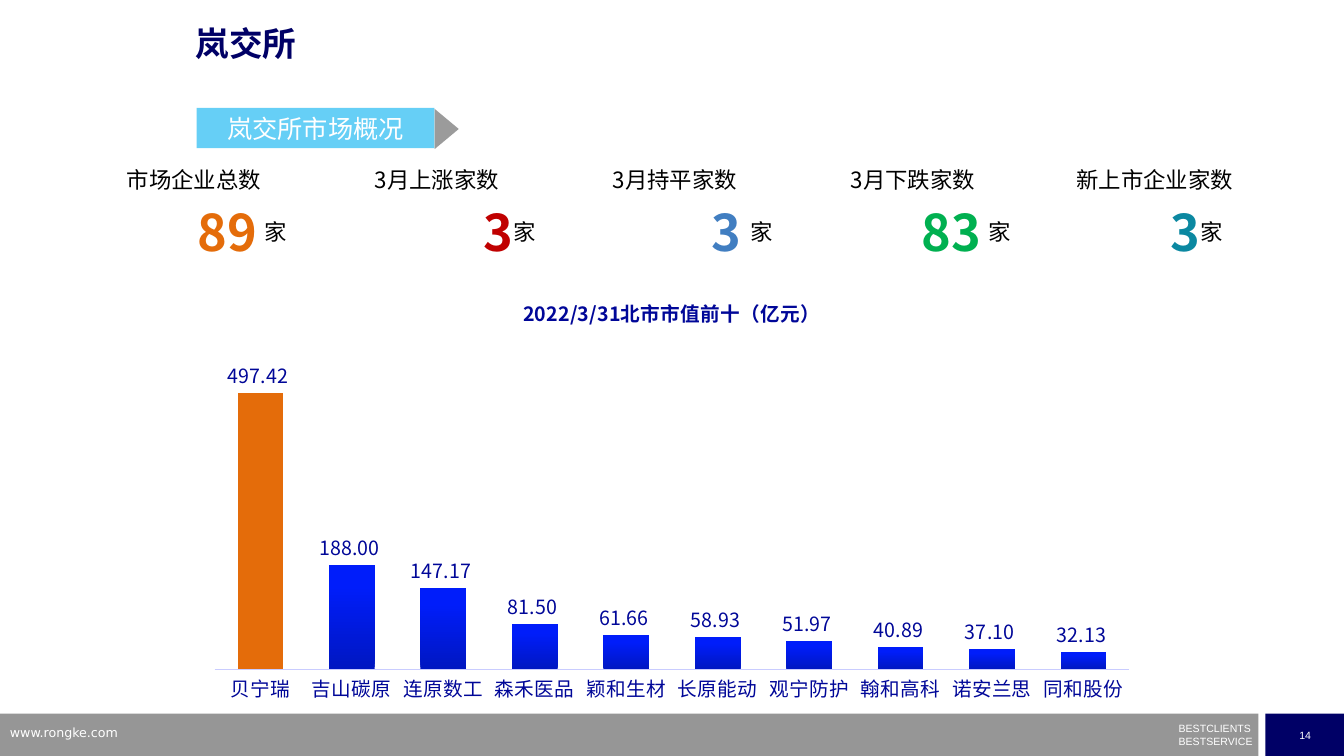
from typing import NamedTuple

from lxml import etree
from pptx import Presentation
from pptx.chart.data import CategoryChartData
from pptx.dml.color import RGBColor
from pptx.enum.chart import XL_CHART_TYPE, XL_LABEL_POSITION, XL_TICK_MARK
from pptx.enum.shapes import MSO_SHAPE
from pptx.enum.text import MSO_ANCHOR, PP_ALIGN
from pptx.oxml.ns import qn
from pptx.util import Emu, Pt

EMU_PER_PX = 9144  # 100 px to the inch
SLIDE_WIDTH, SLIDE_HEIGHT = 1333, 750
RECTANGLE, TRIANGLE = MSO_SHAPE.RECTANGLE, MSO_SHAPE.ISOSCELES_TRIANGLE
LEFT, CENTER, RIGHT = PP_ALIGN.LEFT, PP_ALIGN.CENTER, PP_ALIGN.RIGHT
TOP, MIDDLE = MSO_ANCHOR.TOP, MSO_ANCHOR.MIDDLE
CHINESE, LATIN, WEB = "Noto Sans CJK SC", "Arial", "DejaVu Sans"
WHITE, BLACK, NAVY, GRAY = "FFFFFF", "000000", "000066", "969696"
CHART_BLUE, ORANGE = "000798", "E46C0A"
VALUE_FORMAT = "0.00_ "


class Box(NamedTuple):
    left: int
    top: int
    width: int
    height: int


class Statistic(NamedTuple):
    label: str
    number: str
    color: str
    left: int
    label_width: int = 144
    number_offset: int = 70
    unit_offset: int = 137
    align: PP_ALIGN = LEFT


STATISTICS = [
    Statistic("市场企业总数", "89", ORANGE, 116, label_width=216),
    Statistic("3月上涨家数", "3", "C00000", 362, align=RIGHT),
    Statistic("3月持平家数", "3", "417EC1", 598, number_offset=98),
    Statistic("3月下跌家数", "83", "00B050", 834),
    Statistic("新上市企业家数", "3", "0B88A1", 1058, label_width=177,
              number_offset=55, unit_offset=123, align=RIGHT),
]
MARKET_VALUES = {
    "贝宁瑞": 497.42, "吉山碳原": 188, "连原数工": 147.17, "森禾医品": 81.5,
    "颖和生材": 61.66, "长原能动": 58.93, "观宁防护": 51.97, "翰和高科": 40.89,
    "诺安兰思": 37.1, "同和股份": 32.13,
}


def px(value: int) -> Emu:
    return Emu(value * EMU_PER_PX)


def place(box: Box) -> list[Emu]:
    return [px(value) for value in box]


def rgb(color: str) -> RGBColor:
    return RGBColor.from_string(color)


def style_font(font, size: float, color: str, name: str = CHINESE, bold: bool = False) -> None:
    font.size, font.bold, font.name = Pt(size), bold, name
    font.color.rgb = rgb(color)


def write(shape, text: str, *, size: float, color: str = WHITE, name: str = CHINESE,
          bold: bool = False, align: PP_ALIGN = LEFT, anchor: MSO_ANCHOR = TOP,
          inset: bool = True, spacing: float = 1.0, before: float = 0) -> None:
    """Fill a shape with one paragraph per line of text."""
    frame = shape.text_frame
    frame.word_wrap, frame.vertical_anchor = True, anchor
    if not inset:
        frame.margin_left = frame.margin_right = frame.margin_top = frame.margin_bottom = 0
    for index, line in enumerate(text.split("\n")):
        paragraph = frame.add_paragraph() if index else frame.paragraphs[0]
        paragraph.alignment, paragraph.line_spacing = align, spacing
        if index:
            paragraph.space_before = Pt(before)
        run = paragraph.add_run()
        run.text = line
        style_font(run.font, size, color, name, bold)
        if name == CHINESE:
            east_asian = etree.SubElement(run.font._element, qn("a:ea"))
            east_asian.set("typeface", name)


def add_text(slide, box: Box, text: str, **text_format) -> None:
    write(slide.shapes.add_textbox(*place(box)), text, **text_format)


def add_block(slide, box: Box, color: str, kind=RECTANGLE, opacity: int = 100):
    shape = slide.shapes.add_shape(kind, *place(box))
    shape.shadow.inherit = False
    shape.fill.solid()
    shape.fill.fore_color.rgb = rgb(color)
    shape.line.fill.background()
    if opacity < 100:
        color_element = next(shape._element.spPr.iter(qn("a:srgbClr")))
        etree.SubElement(color_element, qn("a:alpha")).set("val", str(opacity * 1000))
    return shape


def add_footer(slide) -> None:
    add_block(slide, Box(0, 708, 1248, 42), GRAY)
    page = add_block(slide, Box(1255, 708, 79, 42), NAVY)
    write(page, "14", size=7.5, name=LATIN, align=CENTER, anchor=MIDDLE)
    add_text(slide, Box(1169, 722, 76, 20), "BESTCLIENTS\nBESTSERVICE", size=7.5,
             name=LATIN, inset=False, spacing=0.5, before=4.3)
    add_text(slide, Box(0, 714, 320, 26), "www.rongke.com", size=9, name=WEB)


def add_heading(slide) -> None:
    add_text(slide, Box(194, 30, 900, 39), "岚交所", size=24, color=NAVY,
             bold=True, inset=False, spacing=0.8)
    banner = add_block(slide, Box(195, 107, 236, 40), "00B0F0", opacity=60)
    write(banner, "岚交所市场概况", size=18, align=CENTER, anchor=MIDDLE)
    arrow = add_block(slide, Box(423, 116, 40, 24), "595959", TRIANGLE, opacity=60)
    arrow.rotation = 90


def add_statistic(slide, item: Statistic) -> None:
    add_text(slide, Box(item.left, 163, item.label_width, 37), item.label,
             size=16, color=BLACK, spacing=0.88)
    add_text(slide, Box(item.left + item.unit_offset, 215, 60, 37), "家",
             size=16, color=BLACK, spacing=0.88)
    add_text(slide, Box(item.left + item.number_offset, 202, 87, 71), item.number,
             size=36, color=item.color, bold=True, align=item.align, spacing=0.88)


def set_layout(element, **fractions: float) -> None:
    """Place a chart part by fractions of the chart's size."""
    layout = element.find(qn("c:layout"))
    if layout is None:
        layout = etree.Element(qn("c:layout"))
        element.insert(0, layout)
    manual = etree.SubElement(layout, qn("c:manualLayout"))
    if "w" in fractions:
        etree.SubElement(manual, qn("c:layoutTarget")).set("val", "inner")
    for axis in ("x", "y"):
        etree.SubElement(manual, qn(f"c:{axis}Mode")).set("val", "edge")
    for key, value in fractions.items():
        etree.SubElement(manual, qn(f"c:{key}")).set("val", str(value))


def add_market_chart(slide) -> None:
    data = CategoryChartData()
    data.categories = list(MARKET_VALUES)
    data.add_series("Series 1", list(MARKET_VALUES.values()))
    box = Box(194, 273, 945, 430)
    chart = slide.shapes.add_chart(XL_CHART_TYPE.COLUMN_CLUSTERED, *place(box), data).chart
    style_font(chart.font, 14, BLACK)
    chart.has_legend = False
    chart.has_title = True
    title = chart.chart_title
    run = title.text_frame.paragraphs[0].add_run()
    run.text = "2022/3/31北市市值前十（亿元）"
    style_font(run.font, 14, CHART_BLUE, bold=True)
    set_layout(title._element, x=0.34, y=0.04)
    set_layout(chart._chartSpace.chart.plotArea, x=0.02, y=0.14, w=0.96, h=0.77)

    category_axis, value_axis = chart.category_axis, chart.value_axis
    category_axis.major_tick_mark = XL_TICK_MARK.NONE
    style_font(category_axis.tick_labels.font, 14, CHART_BLUE)
    category_axis.format.line.color.rgb = rgb("C9CCFF")
    category_axis.format.line.width = Pt(0.75)
    value_axis.minimum_scale, value_axis.maximum_scale = 0, 600
    value_axis.has_major_gridlines = False
    value_axis.visible = False

    plot = chart.plots[0]
    plot.gap_width, plot.overlap, plot.vary_by_categories = 100, -24, False
    series = plot.series[0]
    fill = series.format.fill
    fill.gradient()
    fill.gradient_angle = 90
    for stop, color, position in zip(fill.gradient_stops, ("0017C1", "001DFA"), (0, 0.8)):
        stop.color.rgb, stop.position = rgb(color), position
    leader_fill = series.points[0].format.fill
    leader_fill.solid()
    leader_fill.fore_color.rgb = rgb(ORANGE)
    labels = series.data_labels
    labels.show_value, labels.position = True, XL_LABEL_POSITION.OUTSIDE_END
    labels.number_format, labels.number_format_is_linked = VALUE_FORMAT, False
    style_font(labels.font, 14, CHART_BLUE)


def main() -> None:
    presentation = Presentation()
    presentation.slide_width, presentation.slide_height = px(SLIDE_WIDTH), px(SLIDE_HEIGHT)
    slide = presentation.slides.add_slide(presentation.slide_layouts[6])
    add_footer(slide)
    add_heading(slide)
    for item in STATISTICS:
        add_statistic(slide, item)
    add_market_chart(slide)
    presentation.save("out.pptx")


if __name__ == "__main__":
    main()
